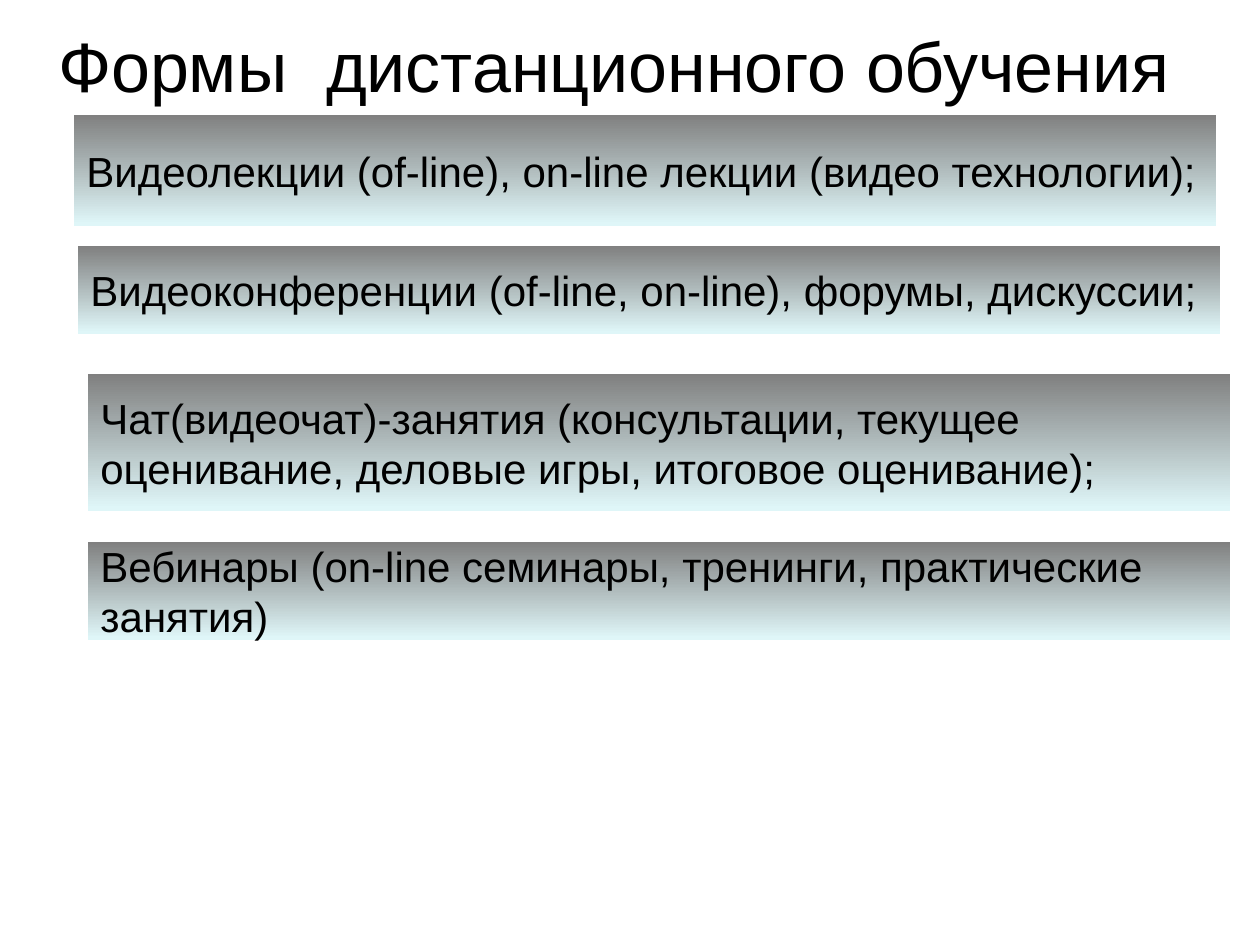
from pptx import Presentation
from pptx.dml.color import RGBColor as Rgb
from pptx.enum.shapes import MSO_SHAPE as Shape
from pptx.enum.text import MSO_ANCHOR as Anchor, PP_ALIGN as Align
from pptx.util import Pt

PX = 914400 / 126  # EMU per pixel


def color(code):
    return Rgb.from_string(code)


def write(shape, text, size=24, align=Align.LEFT, ink="000000"):
    frame = shape.text_frame
    frame.word_wrap = True
    frame.vertical_anchor = Anchor.MIDDLE
    para = frame.paragraphs[0]
    para.alignment = align
    run = para.add_run()
    run.text = text
    run.font.name = "Arial"
    run.font.size = Pt(size)
    run.font.color.rgb = color(ink)


deck = Presentation()
deck.slide_width, deck.slide_height = round(1260 * PX), round(945 * PX)
slide = deck.slides.add_slide(deck.slide_layouts[5])

# Title
title = slide.shapes.title
title.left, title.top, title.width, title.height = [
    round(n * PX) for n in (21, 21, 1205, 88)]
write(title, "Формы  дистанционного обучения ", size=40, align=Align.CENTER)

# Forms of study: left, top, height, text
forms = [
    (74, 115, 111, "Видеолекции (of-line), on-line лекции (видео технологии);"),
    (78, 246, 88, "Видеоконференции (of-line, on-line), форумы, дискуссии;"),
    (88, 374, 137, "Чат(видеочат)-занятия (консультации, текущее оценивание, "
                   "деловые игры, итоговое оценивание);"),
    (88, 542, 98, "Вебинары (on-line семинары, тренинги, практические занятия)"),
]
for left, top, high, text in forms:
    bar = slide.shapes.add_shape(
        Shape.RECTANGLE, *[round(n * PX) for n in (left, top, 1142, high)])
    bar.shadow.inherit = False
    bar.line.fill.background()
    # Grey at the top fading to pale blue
    bar.fill.gradient()
    bar.fill.gradient_angle = 270
    stops = [(0, "808080"), (0.98, "DFF6F8")]
    for stop, (place, tint) in zip(bar.fill.gradient_stops, stops):
        stop.position = place
        stop.color.rgb = color(tint)
    write(bar, text)

deck.save("out.pptx")
